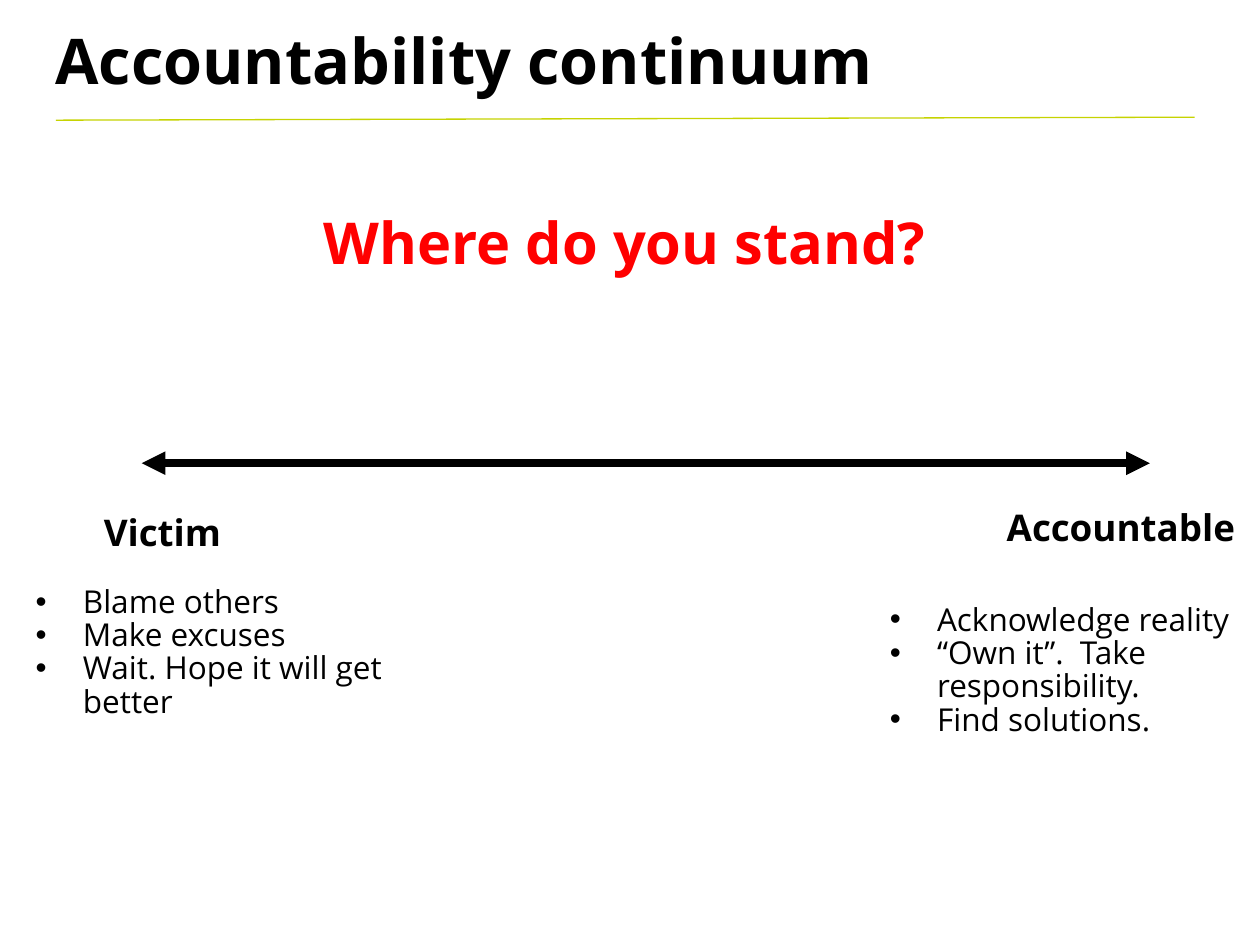
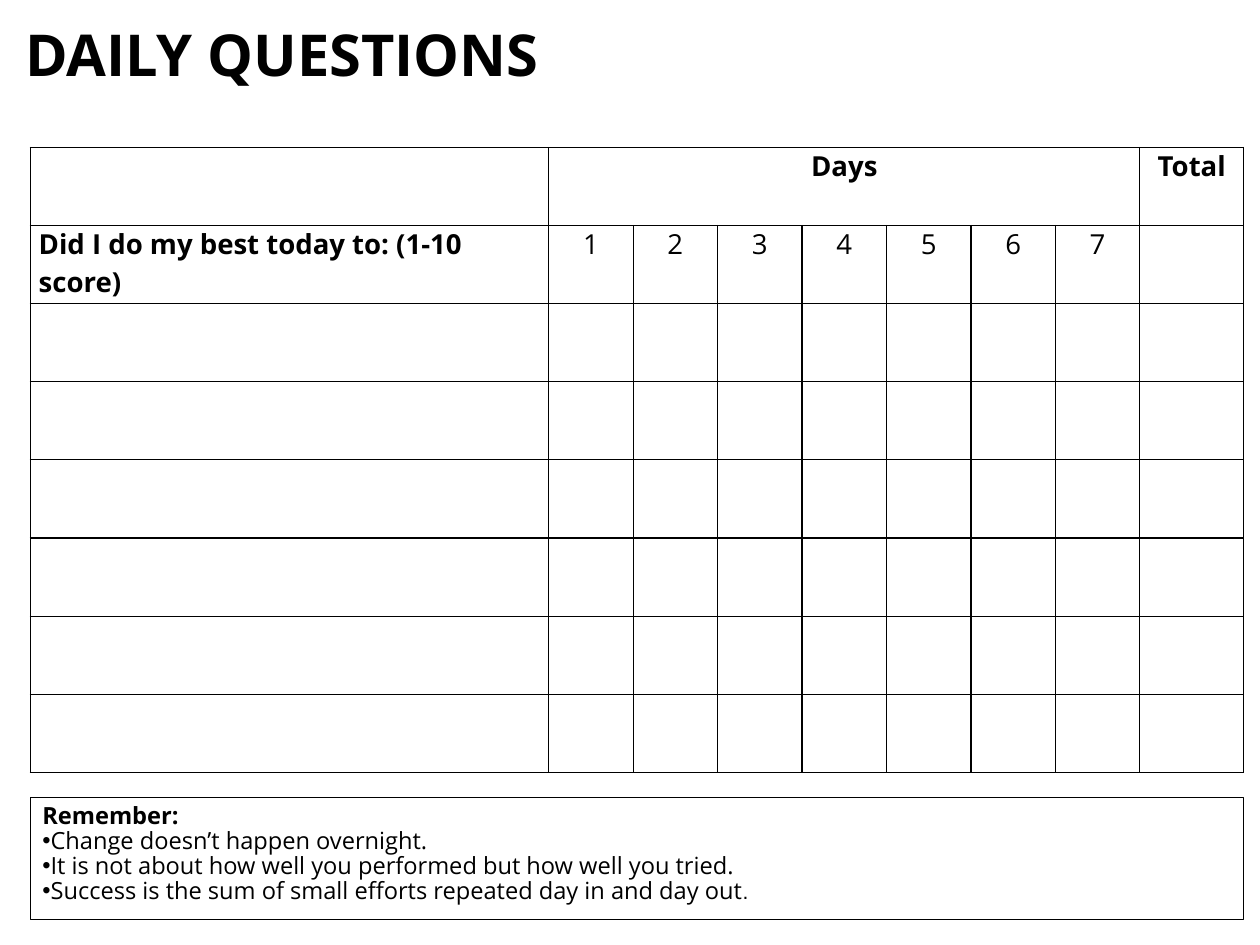
from lxml.etree import SubElement
from pptx import Presentation
from pptx.dml.color import RGBColor
from pptx.enum.shapes import MSO_CONNECTOR, MSO_SHAPE
from pptx.enum.text import MSO_ANCHOR, MSO_AUTO_SIZE, PP_ALIGN
from pptx.oxml.ns import qn
from pptx.util import Cm, Pt

FONT = "Open Sans"
BLACK, WHITE, RED, LIME = "000000", "FFFFFF", "FF0000", "C6D301"
SINGLE_LINE, LIST_LINE = 0.93, 0.88


def color(hex_value):
    return RGBColor.from_string(hex_value)


def set_all(target, values):
    for name, value in values.items():
        setattr(target, name, value)


def add_run(paragraph, text, size, ink=BLACK, **formats):
    run = paragraph.add_run()
    run.text = text
    set_all(run.font, {"name": FONT, "size": Pt(size), **formats})
    run.font.color.rgb = color(ink)


def add_bullet(paragraph, margin, indent):
    """Give the paragraph a round bullet; margin and indent are in centimetres."""
    properties = paragraph._p.get_or_add_pPr()
    properties.set("marL", str(Cm(margin)))
    properties.set("indent", str(Cm(indent)))
    SubElement(properties, qn("a:buFont"), typeface="Arial")
    SubElement(properties, qn("a:buChar"), char="•")


def add_borders(cell, width=1):
    properties = cell._tc.get_or_add_tcPr()
    for side in ("a:lnL", "a:lnR", "a:lnT", "a:lnB"):
        line = SubElement(properties, qn(side), w=str(Pt(width)))
        fill = SubElement(line, qn("a:solidFill"))
        SubElement(fill, qn("a:srgbClr"), val=BLACK)


class Deck:
    """Holds the presentation and draws on its newest slide, in centimetres."""

    def __init__(self, width, height):
        self.presentation = Presentation()
        set_all(self.presentation, {"slide_width": Cm(width), "slide_height": Cm(height)})

    def new_slide(self):
        blank = self.presentation.slide_layouts[6]
        self.shapes = self.presentation.slides.add_slide(blank).shapes

    def text_frame(self, box, wrap=True):
        frame = self.shapes.add_textbox(*map(Cm, box)).text_frame
        set_all(frame, {"word_wrap": wrap, "auto_size": MSO_AUTO_SIZE.SHAPE_TO_FIT_TEXT})
        return frame

    def heading(self, text, box, size, ink=BLACK, align=PP_ALIGN.LEFT, wrap=True):
        paragraph = self.text_frame(box, wrap).paragraphs[0]
        set_all(paragraph, {"alignment": align, "line_spacing": SINGLE_LINE})
        add_run(paragraph, text, size, ink, bold=True)

    def bullets(self, items, box, size=24):
        frame = self.text_frame(box)
        for index, item in enumerate(items):
            paragraph = frame.add_paragraph() if index else frame.paragraphs[0]
            paragraph.line_spacing = LIST_LINE
            add_run(paragraph, item, size)
            add_bullet(paragraph, 1.27, -1.27)

    def line(self, start, end, ink, width, arrows=False):
        connector = self.shapes.add_connector(
            MSO_CONNECTOR.STRAIGHT, *map(Cm, (*start, *end)))
        connector.line.color.rgb = color(ink)
        connector.line.width = Pt(width)
        if arrows:
            for tag in ("a:headEnd", "a:tailEnd"):
                SubElement(connector.line._get_or_add_ln(), qn(tag), type="triangle")
        SubElement(connector._element.spPr, qn("a:effectLst"))

    def score_table(self, left, top, widths, row_height, row_count):
        """Add a bordered, unfilled table and return it."""
        table = self.shapes.add_table(
            row_count, len(widths), Cm(left), Cm(top),
            Cm(sum(widths)), Cm(row_height * row_count)).table
        set_all(table, {"first_row": False, "horz_banding": False})
        for column, width in zip(table.columns, widths):
            column.width = Cm(width)
        for row in table.rows:
            row.height = Cm(row_height)
        for cell in table.iter_cells():
            set_all(cell, {"margin_left": Cm(0.23), "margin_right": Cm(0.23),
                           "margin_top": 0, "margin_bottom": 0})
            add_borders(cell)
            cell.fill.background()
        return table

    def cell_text(self, cell, text, bold=True, align=PP_ALIGN.CENTER):
        paragraph = cell.text_frame.paragraphs[0]
        paragraph.alignment = align
        add_run(paragraph, text, 21, bold=bold)

    def reminder(self, title, items, box, size=18):
        """Add a framed note whose closing full stop is set smaller, in Arial."""
        note = self.shapes.add_shape(MSO_SHAPE.RECTANGLE, *map(Cm, box))
        note.shadow.inherit = False
        note.fill.solid()
        note.fill.fore_color.rgb = color(WHITE)
        note.line.color.rgb = color(BLACK)
        note.line.width = Pt(0.75)
        frame = note.text_frame
        set_all(frame, {"word_wrap": True, "vertical_anchor": MSO_ANCHOR.TOP,
                        "margin_left": Cm(0.33), "margin_right": Cm(0.33),
                        "margin_top": Cm(0.18), "margin_bottom": Cm(0.18)})
        paragraph = frame.paragraphs[0]
        set_all(paragraph, {"alignment": PP_ALIGN.LEFT, "line_spacing": LIST_LINE})
        add_run(paragraph, title, size, bold=True)
        for item in items:
            paragraph = frame.add_paragraph()
            set_all(paragraph, {"alignment": PP_ALIGN.LEFT, "line_spacing": LIST_LINE})
            add_run(paragraph, item, size, bold=False)
            add_bullet(paragraph, 0.05, -0.64)
        add_run(paragraph, ".", 16, name="Arial", bold=False)


def continuum_slide(deck):
    deck.new_slide()
    deck.heading("Accountability continuum", (1.24, 0.64, 28.5, 2.31), 48)
    deck.line((1.5, 3.23), (32.11, 3.15), LIME, 1)
    deck.line((3.81, 12.45), (30.91, 12.45), BLACK, 6, arrows=True)
    deck.bullets(["Blame others", "Make excuses", "Wait. Hope it will get better"],
                 (0.71, 15.65, 10.21, 4.37))
    deck.bullets(["Acknowledge reality", "“Own it”.  Take responsibility.", "Find solutions."],
                 (23.67, 16.13, 10.21, 4.37))
    deck.heading("Where do you stand?", (8.33, 5.59, 16.94, 2.13), 44, RED, PP_ALIGN.CENTER)
    deck.heading("Accountable", (26.37, 13.56, 7.52, 1.45), 28, align=PP_ALIGN.CENTER)
    deck.heading("Victim", (2.54, 13.67, 4.42, 1.45), 28)


def questions_slide(deck):
    deck.new_slide()
    day_count = 7
    widths = [13.94] + [2.27] * day_count + [2.79]
    left = 0.81
    table = deck.score_table(left, 3.96, widths, 2.1, 8)
    table.cell(0, 1).merge(table.cell(0, day_count))
    deck.cell_text(table.cell(0, 1), "Days")
    deck.cell_text(table.cell(0, day_count + 1), "Total")
    deck.cell_text(table.cell(1, 0), "Did I do my best today to: (1-10 score)",
                   align=PP_ALIGN.LEFT)
    for day in range(1, day_count + 1):
        deck.cell_text(table.cell(1, day), str(day), bold=False)
    deck.heading("DAILY QUESTIONS", (0.43, 0.56, 14.53, 2.13), 44, wrap=False)
    deck.reminder("Remember:", [
        "Change doesn’t happen overnight.",
        "It is not about how well you performed but how well you tried.",
        "Success is the sum of small efforts repeated day in and day out",
    ], (left, 21.44, sum(widths), 3.28))


def main():
    deck = Deck(33.87, 25.4)
    continuum_slide(deck)
    questions_slide(deck)
    deck.presentation.save("out.pptx")


if __name__ == "__main__":
    main()
